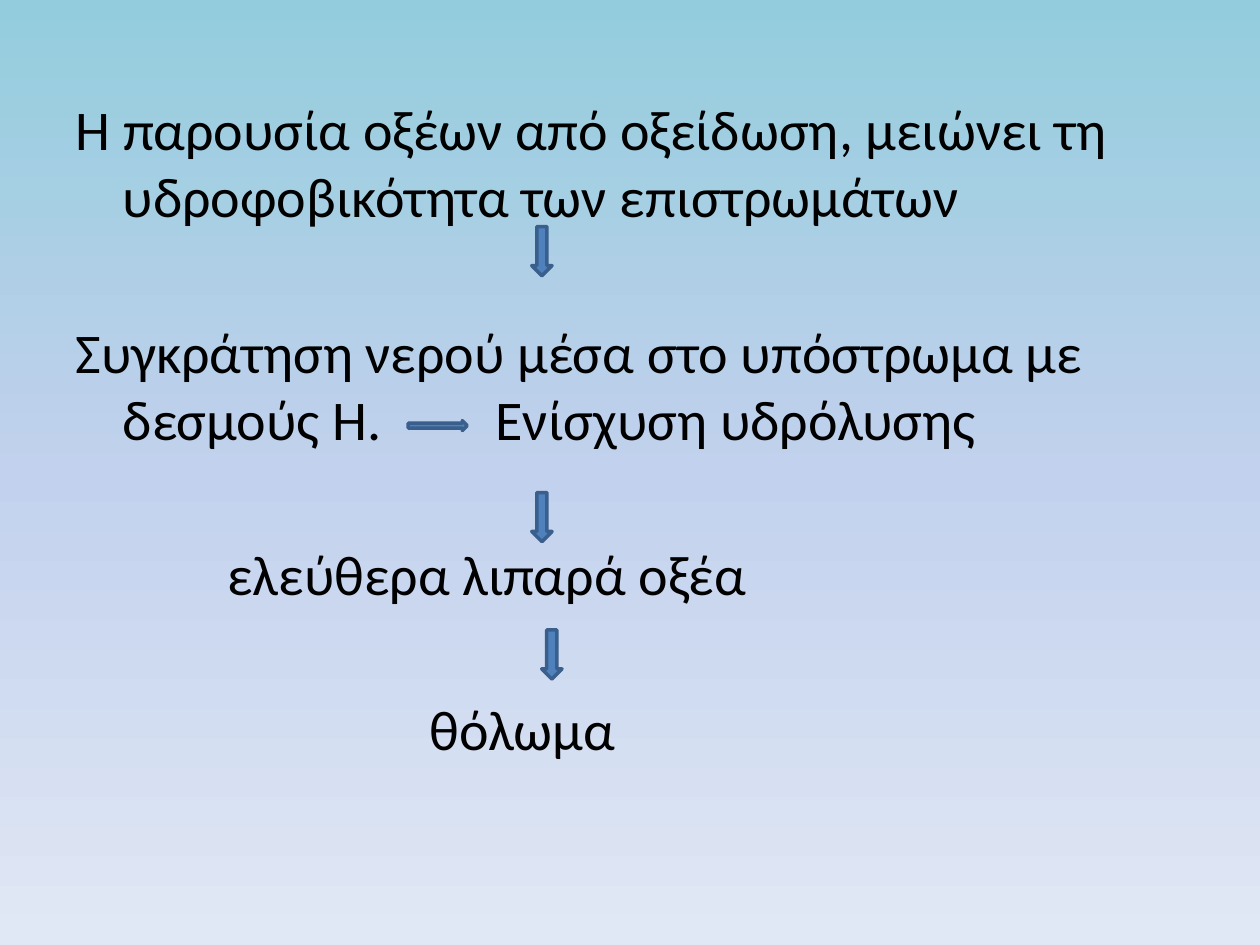
"""Build a slide showing how acids in paint layers lead to blooming."""
import copy
import dataclasses

import pptx
import pptx.dml.color
import pptx.enum.shapes
import pptx.enum.text
import pptx.oxml.ns
import pptx.presentation
import pptx.shapes.base
import pptx.slide
import pptx.text.text
import pptx.util
from lxml import etree

Cm = pptx.util.Cm
Pt = pptx.util.Pt
RGBColor = pptx.dml.color.RGBColor
Shape = pptx.enum.shapes.MSO_SHAPE

BLACK = RGBColor(0x00, 0x00, 0x00)
ARROW_FILL = RGBColor(0x4F, 0x81, 0xBD)
ARROW_LINE = RGBColor(0x3A, 0x5F, 0x8C)
BACKGROUND = (
    (0.0, RGBColor(0x93, 0xCD, 0xDD)),
    (0.5, RGBColor(0xC2, 0xD1, 0xED)),
    (1.0, RGBColor(0xE1, 0xE8, 0xF5)),
)
HANGING = 0.95


@dataclasses.dataclass(frozen=True)
class Step:
    spans: tuple[str, ...]
    left: float = HANGING
    indent: float = -HANGING
    before: float = 50.3


@dataclasses.dataclass(frozen=True)
class Arrow:
    kind: Shape
    left: float
    top: float
    width: float = 0.41
    height: float = 0.99


STEPS = (
    Step(("Η παρουσία οξέων από οξείδωση, μειώνει τη υδροφοβικότητα των επιστρωμάτων",),
         before=6.4),
    Step(("Συγκράτηση νερού μέσα στο υπόστρωμα με δεσμούς Η.", "Ενίσχυση υδρόλυσης")),
    Step(("ελεύθερα λιπαρά οξέα",), left=3.06, indent=0),
    Step(("θόλωμα",), left=7.14, indent=0),
)
ARROWS = (
    Arrow(Shape.DOWN_ARROW, 10.72, 4.57),
    Arrow(Shape.DOWN_ARROW, 10.72, 9.93),
    Arrow(Shape.RIGHT_ARROW, 8.23, 8.48, width=1.19, height=0.2),
    Arrow(Shape.DOWN_ARROW, 10.92, 12.7),
)


def add_span(para: pptx.text.text._Paragraph, text: str, *, size: float = 32,
             font: str = "Calibri", color: RGBColor = BLACK, tracking: float = 0) -> None:
    span = para.add_run()
    span.text = text
    span.font.size = Pt(size)
    span.font.name = font
    span.font.color.rgb = color
    if tracking:
        span.font._element.set("spc", str(round(tracking * 100)))


def write_step(para: pptx.text.text._Paragraph, step: Step) -> None:
    para.space_before = Pt(step.before)
    properties = para._p.get_or_add_pPr()
    properties.set("marL", str(Cm(step.left)))
    properties.set("indent", str(Cm(step.indent)))
    etree.SubElement(properties, pptx.oxml.ns.qn("a:buNone"))
    for number, text in enumerate(step.spans):
        if number:
            add_span(para, " ", tracking=57.8)
        add_span(para, text)


def draw_arrow(page: pptx.slide.Slide, arrow: Arrow) -> None:
    shape = page.shapes.add_shape(arrow.kind, Cm(arrow.left), Cm(arrow.top),
                                  Cm(arrow.width), Cm(arrow.height))
    shape.shadow.inherit = False
    shape.fill.solid()
    shape.fill.fore_color.rgb = ARROW_FILL
    shape.line.color.rgb = ARROW_LINE
    shape.line.width = Pt(2)


def paint_background(page: pptx.slide.Slide) -> None:
    fill = page.background.fill
    fill.gradient()
    fill.gradient_angle = 270
    stop_list = page.element.xpath(".//a:gsLst")[0]
    while len(stop_list) < len(BACKGROUND):
        stop_list.append(copy.deepcopy(stop_list[0]))
    for stop, (position, color) in zip(fill.gradient_stops, BACKGROUND):
        stop.position = position
        stop.color.rgb = color


def main() -> None:
    deck = pptx.Presentation()
    deck.slide_width, deck.slide_height = Cm(25.4), Cm(19.05)
    page = deck.slides.add_slide(deck.slide_layouts[1])
    paint_background(page)

    title = page.shapes.title.element
    title.getparent().remove(title)
    body = page.placeholders[1]
    body.left, body.top = Cm(1.27), Cm(1.78)
    body.width, body.height = Cm(22.86), Cm(15.24)
    box = body.text_frame
    box.word_wrap = True
    box.auto_size = pptx.enum.text.MSO_AUTO_SIZE.NONE
    for number, step in enumerate(STEPS):
        para = box.add_paragraph() if number else box.paragraphs[0]
        write_step(para, step)

    for arrow in ARROWS:
        draw_arrow(page, arrow)
    deck.save("out.pptx")


if __name__ == "__main__":
    main()
